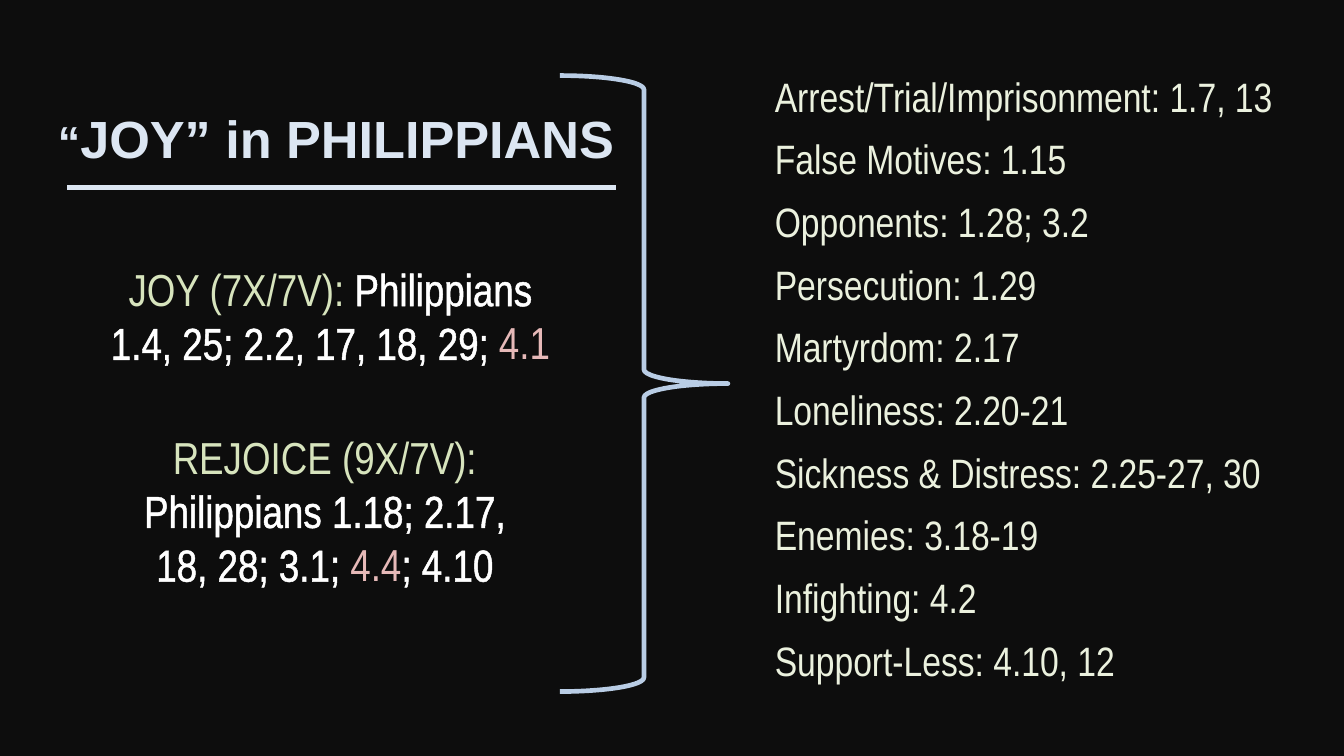
from lxml.etree import SubElement
from pptx import Presentation
from pptx.dml.color import RGBColor
from pptx.enum.shapes import MSO_CONNECTOR, MSO_SHAPE
from pptx.enum.text import MSO_AUTO_SIZE, PP_ALIGN
from pptx.oxml import parse_xml
from pptx.oxml.ns import nsdecls, qn
from pptx.util import Emu, Pt

BLUE, GREEN, PINK, WHITE, PALE = "DCE6F2", "D7E4BD", "E6B9B8", "FFFFFF", "EBF1DE"

TRIALS = [
    ("Arrest/Trial/Imprisonment: ", "1.7, 13"),
    ("False Motives: ", "1.15"),
    ("Opponents: ", "1.28; 3.2"),
    ("Persecution: ", "1.29"),
    ("Martyrdom: ", "2.17"),
    ("Loneliness: ", "2.20-21"),
    ("Sickness & Distress: ", "2.25-27, 30"),
    ("Enemies: ", "3.18-19"),
    ("Infighting: ", "4.2"),
    ("Support-Less: ", "4.10, 12"),
]


def px(n):
    return Emu(n * 9525)


def rgb(code):
    return RGBColor.from_string(code)


def add_run(para, text, size, color, edge=None, font="Arial Narrow", bold=False):
    run = para.add_run()
    run.text = text
    run.font.size = Pt(size)
    run.font.name = font
    run.font.bold = bold
    run.font.color.rgb = rgb(color)
    line = parse_xml(
        f'<a:ln {nsdecls("a")} w="{Pt(1.45)}"><a:solidFill>'
        f'<a:srgbClr val="{edge or color}"/></a:solidFill></a:ln>'
    )
    run.font._element.insert(0, line)


def add_box(slide, left, top, width, height):
    box = slide.shapes.add_textbox(px(left), px(top), px(width), px(height))
    frame = box.text_frame
    frame.word_wrap = True
    frame.auto_size = MSO_AUTO_SIZE.SHAPE_TO_FIT_TEXT
    return frame


def add_title(slide):
    para = add_box(slide, 0, 71, 480, 55).paragraphs[0]
    para.alignment = PP_ALIGN.CENTER
    add_run(para, "“", 24, BLUE, font="Arial", bold=True)
    add_run(para, "JOY” in PHILIPPIANS", 28, BLUE, font="Arial", bold=True)


def add_verses(slide, place, parts):
    para = add_box(slide, *place).paragraphs[0]
    para.alignment = PP_ALIGN.CENTER
    for text, color in parts:
        add_run(para, text, 24, color)


def add_list(slide, items):
    frame = add_box(slide, 544, 46, 400, 460)
    for i, (name, verse) in enumerate(items):
        para = frame.add_paragraph() if i else frame.paragraphs[0]
        para.space_before = Pt(7.2 if i else 0)
        add_run(para, name, 22, PALE)
        add_run(para, verse, 22, PALE, WHITE)


def add_rule(slide, left, right, y):
    rule = slide.shapes.add_connector(
        MSO_CONNECTOR.STRAIGHT, px(left), px(y), px(right), px(y))
    rule.line.color.rgb = rgb(BLUE)
    rule.line.width = Pt(2.5)
    SubElement(rule._element.spPr, qn("a:effectLst"))


def add_brace(slide, left, top, width, height):
    brace = slide.shapes.add_shape(
        MSO_SHAPE.RIGHT_BRACE, px(left), px(top), px(width), px(height))
    brace.shadow.inherit = False
    brace.fill.background()
    brace.line.color.rgb = rgb("B9CDE5")
    brace.line.width = Pt(2.5)


def main():
    deck = Presentation()
    deck.slide_width, deck.slide_height = px(960), px(540)
    slide = deck.slides.add_slide(deck.slide_layouts[6])
    fill = slide.background.fill
    fill.solid()
    fill.fore_color.rgb = rgb("0D0D0D")
    add_title(slide)
    add_rule(slide, 48, 440, 134)
    add_verses(slide, (64, 182, 344, 87), [
        ("JOY (7X/7V): ", GREEN),
        ("Philippians 1.4, 25; 2.2, 17, 18, 29; ", WHITE),
        ("4.1", PINK),
    ])
    add_verses(slide, (72, 302, 320, 126), [
        ("REJOICE (9X/7V): ", GREEN),
        ("Philippians 1.18; 2.17, 18, 28; 3.1; ", WHITE),
        ("4.4", PINK),
        ("; 4.10", WHITE),
    ])
    add_brace(slide, 400, 54, 120, 440)
    add_list(slide, TRIALS)
    deck.save("out.pptx")


if __name__ == "__main__":
    main()
